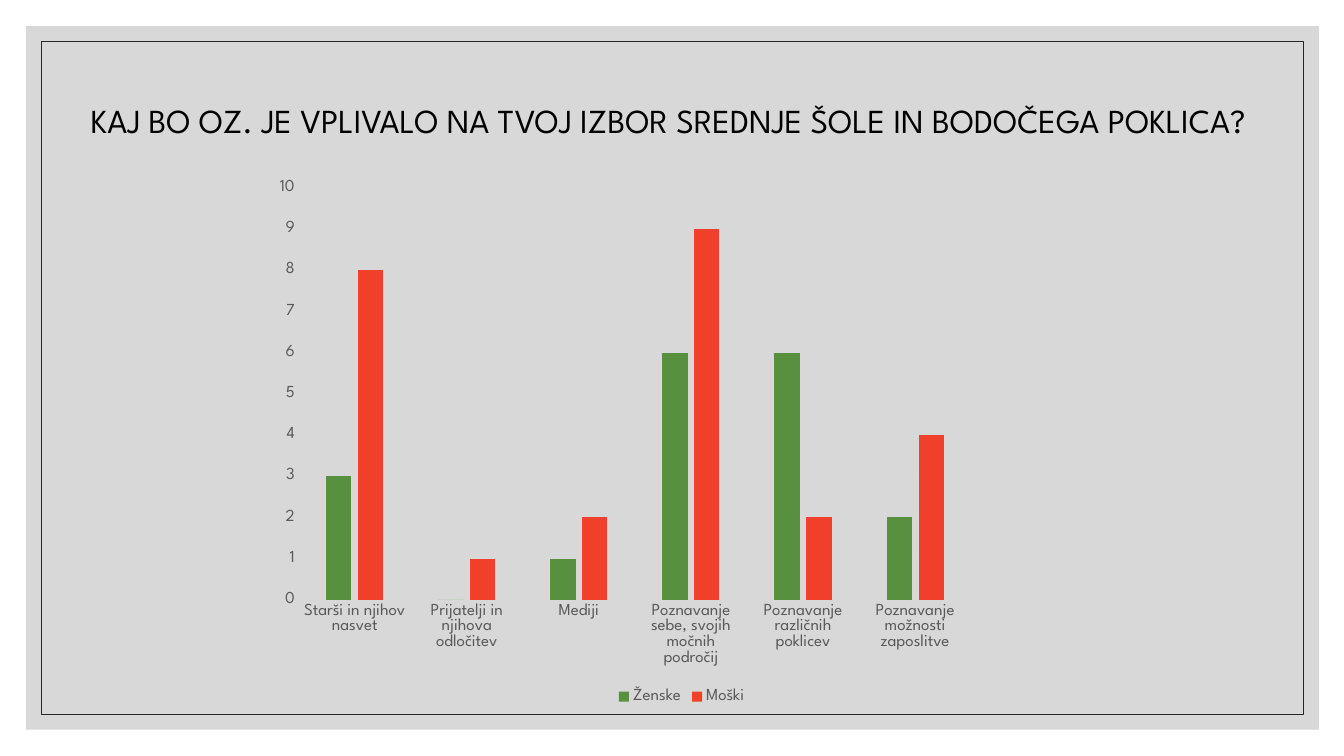
from dataclasses import dataclass

import pptx
import pptx.chart.data
import pptx.dml.color
import pptx.enum.chart
import pptx.enum.shapes
import pptx.enum.text
import pptx.oxml
import pptx.oxml.ns
import pptx.util
from pptx.util import Inches


@dataclass(frozen=True)
class Theme:
    font: str = "League Spartan"
    panel: str = "BFBFBF"
    frame: str = "262626"
    title: str = "000000"
    label: str = "595959"
    grid: str = "D9D9D9"
    women: str = "57903F"
    men: str = "F03F2B"
    head: int = 24
    small: int = 12


THEME = Theme()
TITLE = "KAJ BO OZ. JE VPLIVALO NA TVOJ IZBOR SREDNJE ŠOLE IN BODOČEGA POKLICA?"
CAUSES = [
    "Starši in njihov nasvet",
    "Prijatelji in njihova odločitev",
    "Mediji",
    "Poznavanje sebe, svojih močnih področij",
    "Poznavanje različnih poklicev",
    "Poznavanje možnosti zaposlitve",
    "",
]
VOTES = [
    ("Ženske", THEME.women, [3, 0, 1, 6, 6, 2, None]),
    ("Moški", THEME.men, [8, 1, 2, 9, 2, 4, None]),
]


def rgb(code):
    return pptx.dml.color.RGBColor.from_string(code)


def style(font, size, color):
    font.name = THEME.font
    font.size = pptx.util.Pt(size)
    font.bold = False
    font.color.rgb = rgb(color)


def stroke(line, color, width):
    line.color.rgb = rgb(color)
    line.width = pptx.util.Pt(width)


def add_rect(slide, left, top, width, height):
    rect = slide.shapes.add_shape(
        pptx.enum.shapes.MSO_SHAPE.RECTANGLE,
        Inches(left), Inches(top), Inches(width), Inches(height))
    rect.shadow.inherit = False
    return rect


def add_panel(slide):
    panel = add_rect(slide, 0.26, 0.26, 12.82, 6.98)
    panel.fill.solid()
    panel.fill.fore_color.rgb = rgb(THEME.panel)
    panel.line.fill.background()
    tint = panel.fill._xPr.find(".//" + pptx.oxml.ns.qn("a:srgbClr"))
    tint.append(pptx.oxml.parse_xml(
        f'<a:alpha {pptx.oxml.ns.nsdecls("a")} val="60000"/>'))


def add_frame(slide):
    frame = add_rect(slide, 0.41, 0.41, 12.52, 6.68)
    frame.fill.background()
    stroke(frame.line, THEME.frame, 0.5)


def set_title(slide):
    title = slide.shapes.title
    title.left, title.top = Inches(0.8), Inches(0.94)
    title.width, title.height = Inches(11.91), Inches(0.91)
    frame = title.text_frame
    frame.text = TITLE
    frame.word_wrap = True
    frame.auto_size = pptx.enum.text.MSO_AUTO_SIZE.NONE
    frame.vertical_anchor = pptx.enum.text.MSO_ANCHOR.TOP
    para = frame.paragraphs[0]
    para.alignment = pptx.enum.text.PP_ALIGN.LEFT
    style(para.runs[0].font, THEME.head, THEME.title)


def style_axes(chart):
    for axis in (chart.category_axis, chart.value_axis):
        axis.major_tick_mark = pptx.enum.chart.XL_TICK_MARK.NONE
        axis.minor_tick_mark = pptx.enum.chart.XL_TICK_MARK.NONE
        style(axis.tick_labels.font, THEME.small, THEME.label)
    stroke(chart.category_axis.format.line, THEME.grid, 0.75)
    scale = chart.value_axis
    scale.minimum_scale, scale.maximum_scale = 0, 10
    scale.major_unit = 1
    scale.format.line.fill.background()
    scale.has_major_gridlines = True
    stroke(scale.major_gridlines.format.line, THEME.grid, 0.75)


def add_bars(slide):
    data = pptx.chart.data.CategoryChartData()
    data.categories = CAUSES
    for name, _, votes in VOTES:
        data.add_series(name, votes)
    chart = slide.shapes.add_chart(
        pptx.enum.chart.XL_CHART_TYPE.COLUMN_CLUSTERED,
        Inches(2.61), Inches(1.68), Inches(8.3), Inches(5.35), data).chart
    chart.has_title = False
    style(chart.font, THEME.small, THEME.label)
    style_axes(chart)
    chart.has_legend = True
    chart.legend.position = pptx.enum.chart.XL_LEGEND_POSITION.BOTTOM
    chart.legend.include_in_layout = False
    style(chart.legend.font, THEME.small, THEME.label)
    plot = chart.plots[0]
    plot.gap_width, plot.overlap = 219, -27
    plot.vary_by_categories = False
    for bars, (_, color, _) in zip(plot.series, VOTES):
        bars.invert_if_negative = False
        bars.format.fill.solid()
        bars.format.fill.fore_color.rgb = rgb(color)


def main():
    deck = pptx.Presentation()
    deck.slide_width, deck.slide_height = Inches(13.33), Inches(7.5)
    slide = deck.slides.add_slide(deck.slide_layouts[5])
    add_panel(slide)
    add_frame(slide)
    set_title(slide)
    slide.shapes._spTree.append(slide.shapes.title._element)
    add_bars(slide)
    deck.save("out.pptx")


if __name__ == "__main__":
    main()
